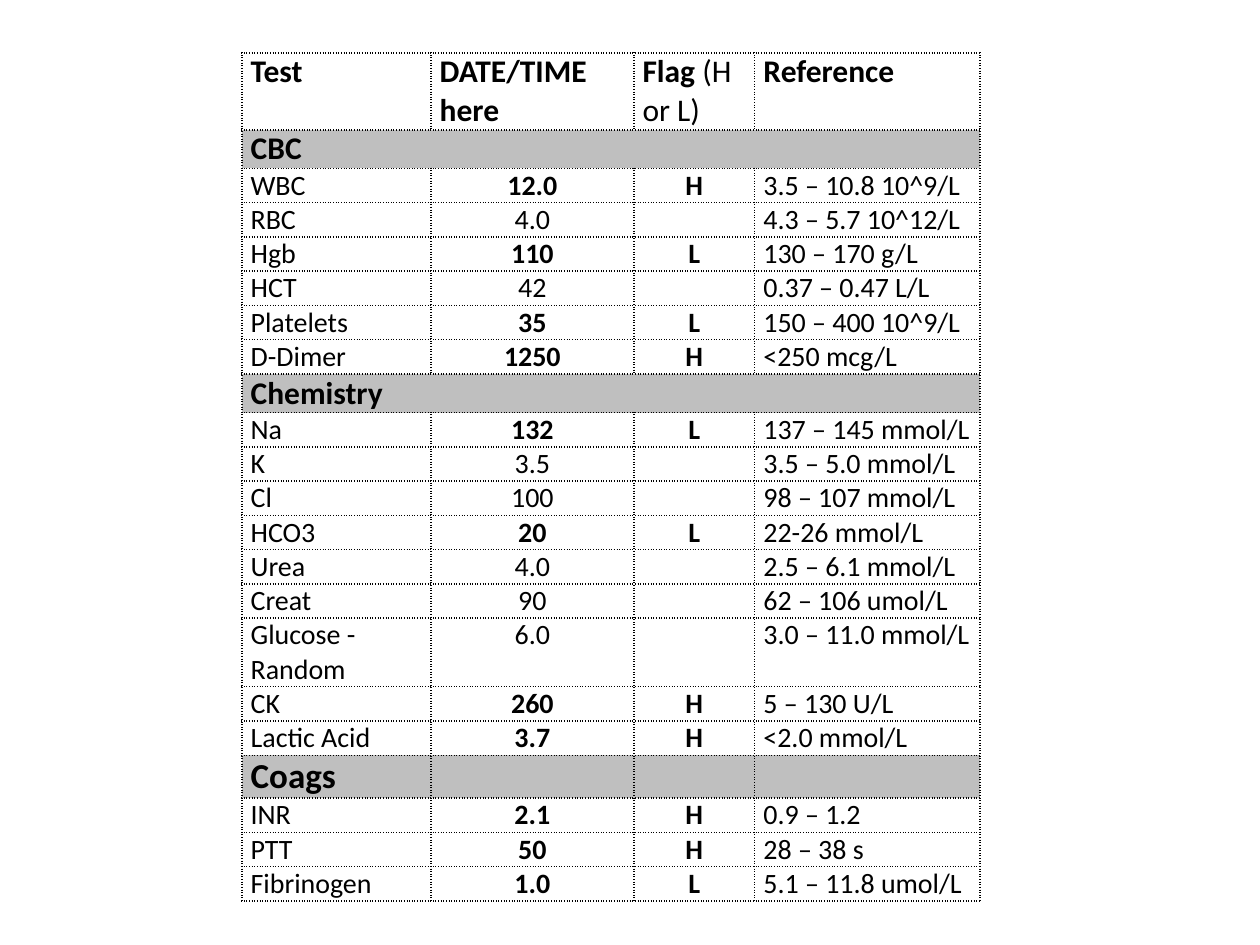
"""Build a slide with one table of lab results."""
from lxml import etree
from pptx import Presentation
from pptx.dml.color import RGBColor
from pptx.enum.text import PP_ALIGN
from pptx.oxml.ns import qn
from pptx.util import Inches, Pt

LEFT, MID = PP_ALIGN.LEFT, PP_ALIGN.CENTER
BLACK = RGBColor(0, 0, 0)
WHITE = RGBColor(255, 255, 255)
GREY = RGBColor(191, 191, 191)
FONT = "Calibri"

HEAD = [
    [("Test", True)],
    [("DATE/TIME here", True)],
    [("Flag ", True), ("(H or L)", False)],
    [("Reference", True)],
]
GROUPS = [
    ("CBC", 18, True, [
        ("WBC", "12.0", "H", "3.5 – 10.8 10^9/L"),
        ("RBC", "4.0", "", "4.3 – 5.7 10^12/L"),
        ("Hgb", "110", "L", "130 – 170 g/L"),
        ("HCT", "42", "", "0.37 – 0.47 L/L"),
        ("Platelets", "35", "L", "150 – 400 10^9/L"),
        ("D-Dimer", "1250", "H", "<250 mcg/L"),
    ]),
    ("Chemistry", 18, True, [
        ("Na", "132", "L", "137 – 145 mmol/L"),
        ("K", "3.5", "", "3.5 – 5.0 mmol/L"),
        ("Cl", "100", "", "98 – 107 mmol/L"),
        ("HCO3", "20", "L", "22-26 mmol/L"),
        ("Urea", "4.0", "", "2.5 – 6.1 mmol/L"),
        ("Creat", "90", "", "62 – 106 umol/L"),
        ("Glucose - Random", "6.0", "", "3.0 – 11.0 mmol/L"),
        ("CK", "260", "H", "5 – 130 U/L"),
        ("Lactic Acid", "3.7", "H", "<2.0 mmol/L"),
    ]),
    ("Coags", 20, False, [
        ("INR", "2.1", "H", "0.9 – 1.2"),
        ("PTT", "50", "H", "28 – 38 s"),
        ("Fibrinogen", "1.0", "L", "5.1 – 11.8 umol/L"),
    ]),
]
COLS = [1.5, 1.61, 0.96, 1.79]
TALL, LOW = 0.18, 0.17
LEFT_X, TOP_Y, HIGH = 1.92, 0.42, 6.6


def write(cell, runs, size=16, align=LEFT):
    para = cell.text_frame.paragraphs[0]
    para.alignment = align
    for text, bold in runs:
        run = para.add_run()
        run.text = text
        font = run.font
        font.name, font.size, font.bold = FONT, Pt(size), bold
        font.color.rgb = BLACK
    if not runs:
        end = etree.SubElement(para._p, qn("a:endParaRPr"))
        end.set("sz", str(size * 100))
        etree.SubElement(end, qn("a:latin")).set("typeface", FONT)


def frame(cell):
    cell.margin_left = cell.margin_right = Inches(0.07)
    cell.margin_top = cell.margin_bottom = 0
    props = cell._tc.get_or_add_tcPr()
    for side in ("lnL", "lnR", "lnT", "lnB"):
        line = etree.SubElement(props, qn(f"a:{side}"), w=str(Pt(1)))
        fill = etree.SubElement(line, qn("a:solidFill"))
        etree.SubElement(fill, qn("a:srgbClr"), val=str(BLACK))
        etree.SubElement(line, qn("a:prstDash"), val="dot")


def paint(cells, color):
    for cell in cells:
        cell.fill.solid()
        cell.fill.fore_color.rgb = color


def main():
    deck = Presentation()
    deck.slide_width, deck.slide_height = Inches(10), Inches(7.5)
    slide = deck.slides.add_slide(deck.slide_layouts[6])
    count = 1 + sum(1 + len(tests) for *_, tests in GROUPS)
    shape = slide.shapes.add_table(
        count, len(COLS), Inches(LEFT_X), Inches(TOP_Y),
        Inches(sum(COLS)), Inches(HIGH))
    table = shape.table
    table.first_row = table.horz_banding = False
    for col, width in zip(table.columns, COLS):
        col.width = Inches(width)
    for row in table.rows:
        row.height = Inches(LOW)
        for cell in row.cells:
            frame(cell)
            cell.fill.background()

    rows = iter(table.rows)
    top = next(rows)
    top.height = Inches(TALL)
    paint(top.cells, WHITE)
    for cell, runs in zip(top.cells, HEAD):
        write(cell, runs, size=18)

    for title, size, joined, tests in GROUPS:
        band = next(rows)
        band.height = Inches(TALL)
        cells = list(band.cells)
        paint(cells, GREY)
        write(cells[0], [(title, True)], size=size)
        for cell in cells[1:]:
            write(cell, [])
        if joined:
            cells[0].merge(cells[-1])
        for test in tests:
            flag = bool(test[2])
            for num, (cell, text) in enumerate(zip(next(rows).cells, test)):
                inner = num in (1, 2)
                write(cell, [(text, flag and inner)] if text else [],
                      align=MID if inner else LEFT)
    shape.height = Inches(HIGH)
    deck.save("out.pptx")


if __name__ == "__main__":
    main()
